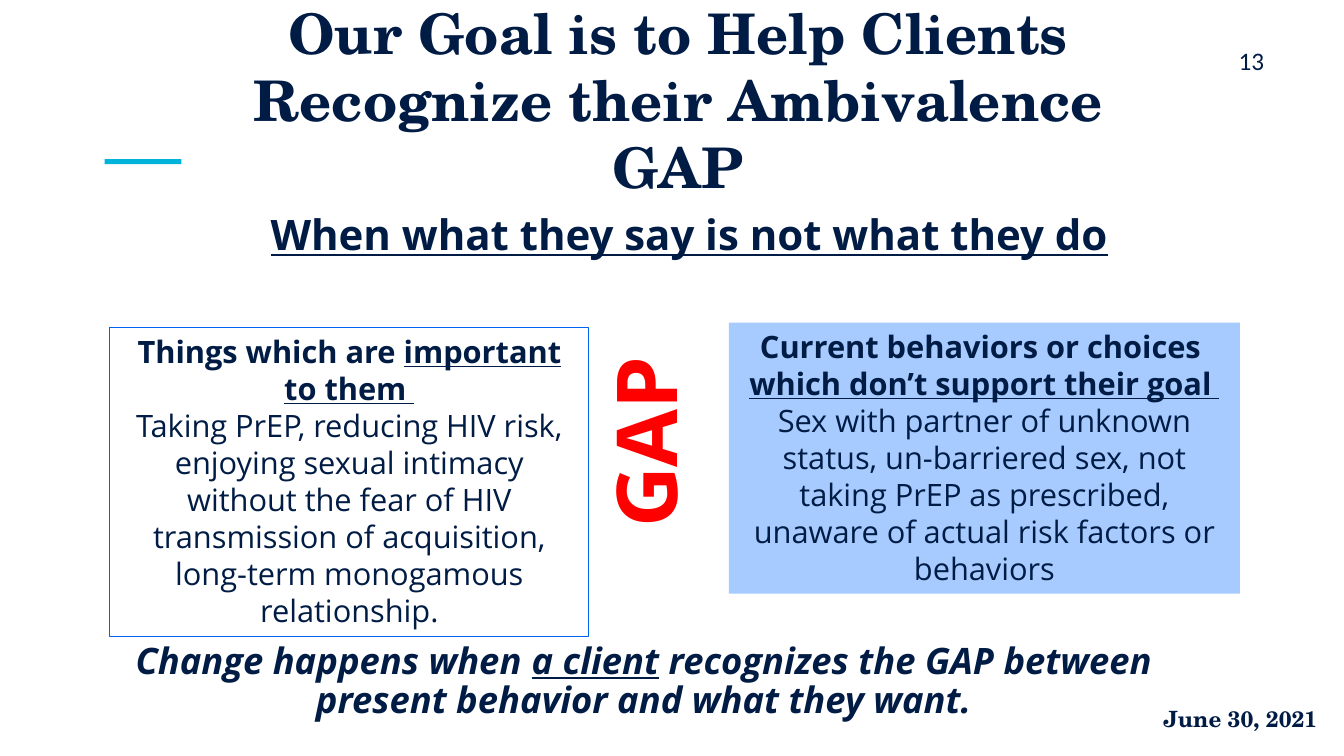
from pptx import Presentation
from pptx.dml.color import RGBColor
from pptx.enum.shapes import MSO_SHAPE as Shape
from pptx.enum.text import MSO_ANCHOR as Anchor, MSO_AUTO_SIZE as Fit, PP_ALIGN as Align
from pptx.util import Cm, Pt

NAVY, RED, CYAN, BLUE, PALE, WHITE = "001C45", "FF0000", "00B3DA", "0064F5", "A7CBFF", "FFFFFF"
SERIF, SANS, NUMERAL = "TeX Gyre Schola", "Open Sans", "Calibri"


def color(value):
    """Turn a hex string into a colour."""
    return RGBColor.from_string(value)


def add_panel(page, box, fill=None, line=None):
    """Add a rectangle with optional fill and thin outline."""
    panel = page.shapes.add_shape(Shape.RECTANGLE, *map(Cm, box))
    panel.shadow.inherit = False
    if fill:
        panel.fill.solid()
        panel.fill.fore_color.rgb = color(fill)
    else:
        panel.fill.background()
    if line:
        panel.line.color.rgb = color(line)
        panel.line.width = Pt(0.75)
    else:
        panel.line.fill.background()
    return panel


def write(shape, paragraphs, size, font=SANS, ink=NAVY, align=Align.CENTER,
          anchor=Anchor.TOP, fit=Fit.NONE, spacing=None):
    """Write paragraphs of (text, style letters) runs into a shape."""
    frame = shape.text_frame
    frame.word_wrap = True
    frame.auto_size = fit
    frame.vertical_anchor = anchor
    for index, runs in enumerate(paragraphs):
        para = frame.add_paragraph() if index else frame.paragraphs[0]
        para.alignment = align
        if spacing:
            para.line_spacing = spacing
        for text, style in runs:
            span = para.add_run()
            span.text = text
            span.font.name = font
            span.font.size = Pt(size)
            span.font.color.rgb = color(ink)
            span.font.bold = "b" in style
            span.font.italic = "i" in style
            span.font.underline = "u" in style


def add_label(page, box, text, style, size, **options):
    """Add a text box holding a single run."""
    label = page.shapes.add_textbox(*map(Cm, box))
    write(label, [[(text, style)]], size, **options)
    return label


def add_heading(page, left, top, width):
    """Place the accent bar, title and underlined subtitle."""
    add_panel(page, (left, top + 3.12, 1.93, 0.13), fill=CYAN)
    add_label(page, (left + 1.8, top, width, 3.2),
              "Our Goal is to Help Clients Recognize their Ambivalence GAP",
              "b", 40, font=SERIF, anchor=Anchor.MIDDLE)
    add_label(page, (left + 3, top + 4.24, width - 1.83, 1.85),
              "When what they say is not what they do", "bu", 30)


def add_comparison(page, left, top):
    """Place the two panels with the upright word between them."""
    goals = add_panel(page, (left, top + 0.13, 12.07, 7.77), line=BLUE)
    write(goals, [
        [("Things which are ", "b"), ("important to them ", "bu")],
        [("Taking PrEP, reducing HIV risk, enjoying sexual intimacy without the fear of HIV "
          "transmission of acquisition, long-term monogamous relationship.", "")],
    ], 22, fit=Fit.SHAPE_TO_FIT_TEXT)
    behaviors = add_panel(page, (left + 15.6, top, 12.88, 6.83), fill=PALE)
    write(behaviors, [
        [("Current behaviors or choices ", "b")],
        [("which don’t support their goal ", "bu")],
        [("Sex with partner of unknown status, un-barriered sex, not taking PrEP as prescribed, "
          "unaware of actual risk factors or behaviors", "")],
    ], 22, fit=Fit.SHAPE_TO_FIT_TEXT)
    gap = add_label(page, (left + 10.72, top + 1.6, 5.51, 2.82), "GAP", "b", 60,
                    ink=RED, fit=Fit.SHAPE_TO_FIT_TEXT)
    gap.rotation = 270


def add_conclusion(page, box):
    """Place the closing sentence."""
    panel = add_panel(page, box, line=WHITE)
    write(panel, [[("Change happens when ", "bi"), ("a client", "biu"),
                   (" recognizes the GAP between present behavior and what they want.", "bi")]],
          26, spacing=0.9)


def add_margin_notes(page, right):
    """Place the page number and date near the right edge."""
    add_label(page, (right - 3.07, 1.02, 2.31, 1.02), "13", "", 18, font=NUMERAL)
    add_label(page, (right - 7.44, 17.65, 7.44, 1.02), "June 30, 2021", "b", 16,
              font=SERIF, align=Align.RIGHT)


def main():
    """Build and save the deck."""
    deck = Presentation()
    deck.slide_width, deck.slide_height = Cm(33.87), Cm(19.05)
    page = deck.slides.add_slide(deck.slide_layouts[6])
    page.background.fill.solid()
    page.background.fill.fore_color.rgb = color(WHITE)
    add_heading(page, 2.64, 0.89, 25.3)
    add_comparison(page, 2.77, 8.13)
    add_conclusion(page, (2.16, 16.08, 28.14, 2.74))
    add_margin_notes(page, 33.45)
    deck.save("out.pptx")


if __name__ == "__main__":
    main()
